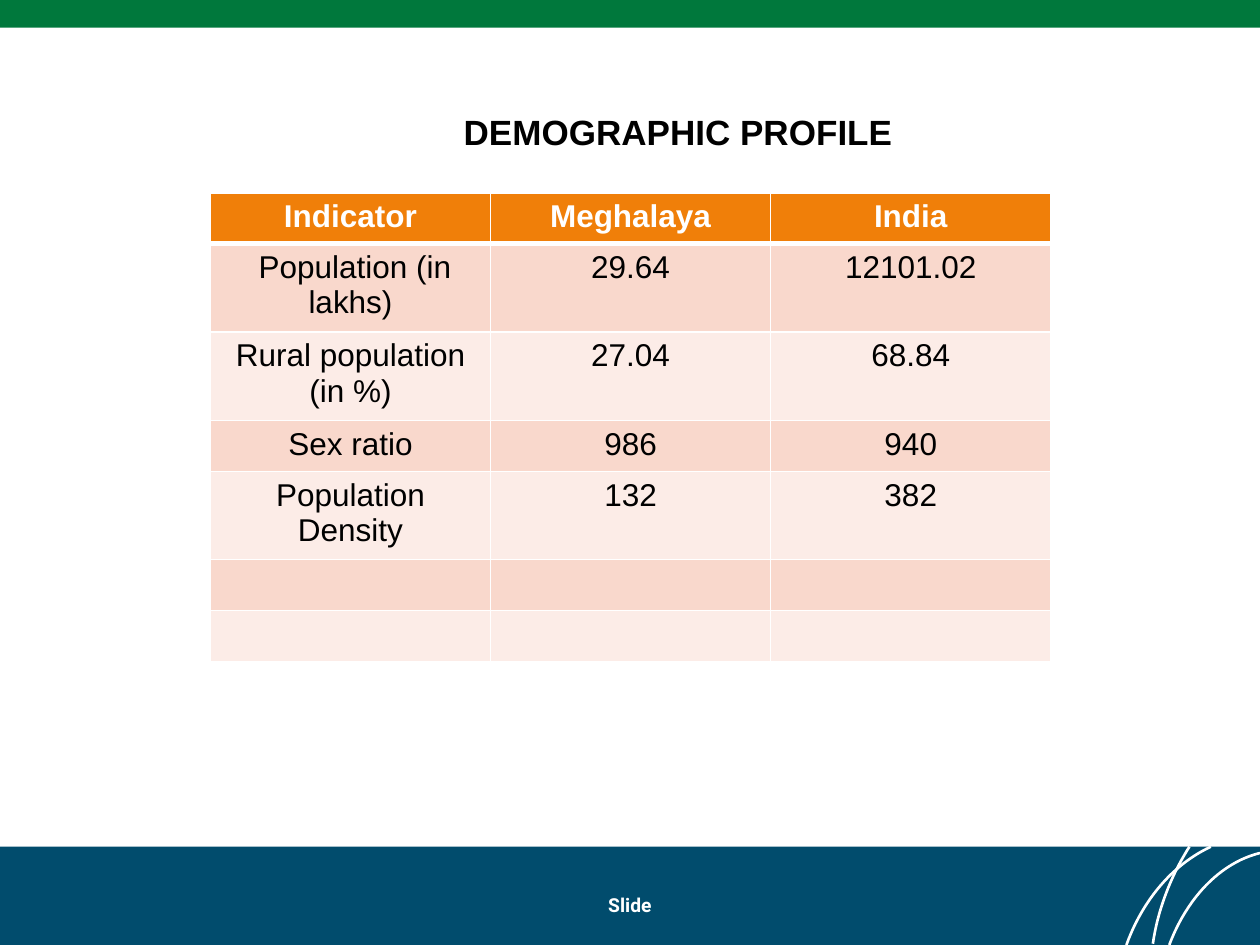
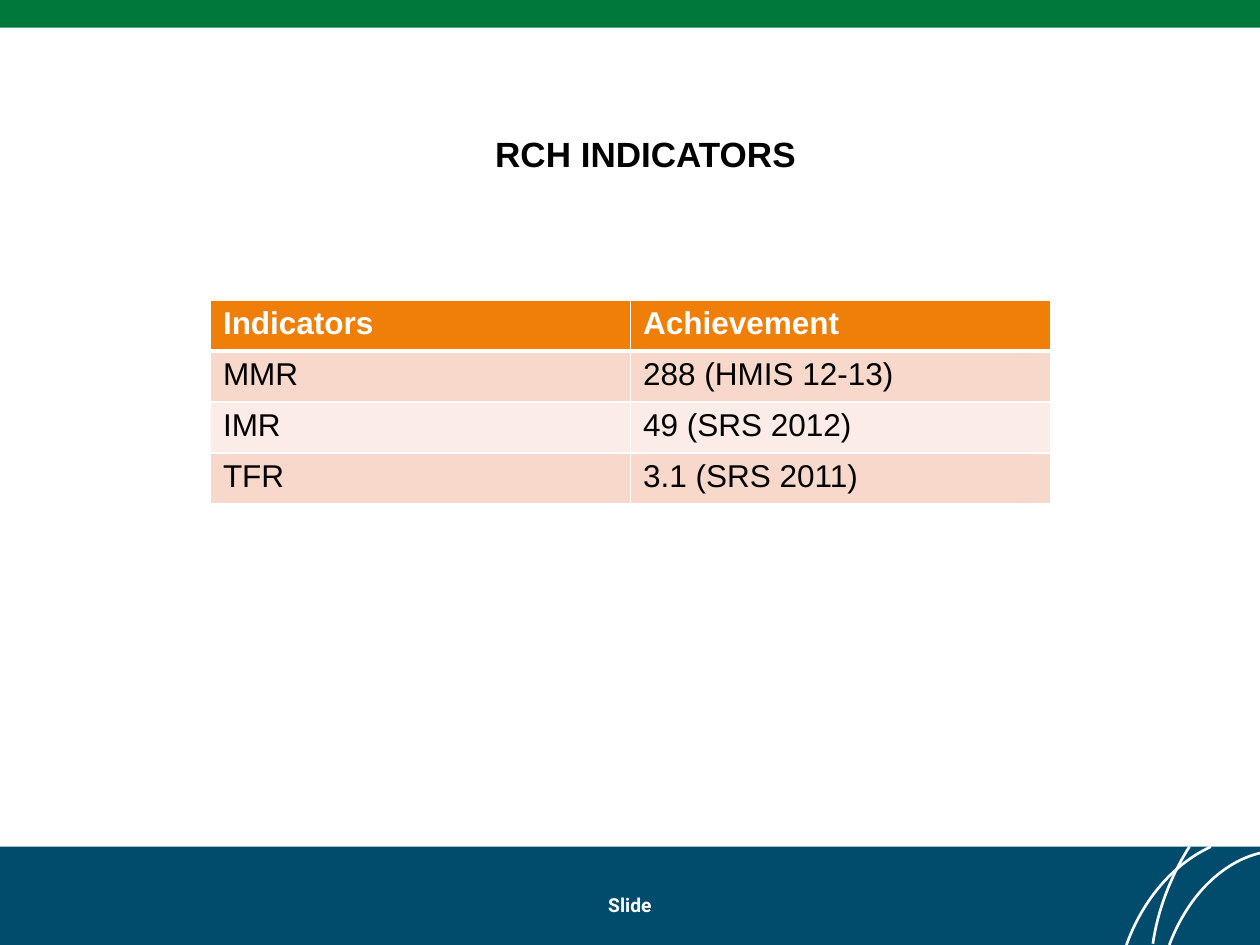
import dataclasses
import pptx
import pptx.dml.color
import pptx.enum.shapes
import pptx.enum.text
import pptx.oxml
import pptx.oxml.ns
import pptx.util

Inches = pptx.util.Inches
ALIGN = pptx.enum.text.PP_ALIGN
RECT = pptx.enum.shapes.MSO_SHAPE.RECTANGLE


@dataclasses.dataclass
class Theme:
    green: str = "00783C"
    navy: str = "014C6D"
    head: str = "F07F09"
    bands: tuple = ("F9D8CC", "FCECE7")
    white: str = "FFFFFF"
    black: str = "000000"
    font: str = "Arial"
    foot_font: str = "Roboto"
    title: int = 20
    cell: int = 18
    foot: int = 11


theme = Theme()


def color(code):
    return pptx.dml.color.RGBColor.from_string(code)


def write(frame, text, size, code, bold, align, font=theme.font):
    para = frame.paragraphs[0]
    para.alignment = align
    run = para.add_run()
    run.text = text
    run.font.name = font
    run.font.size = pptx.util.Pt(size)
    run.font.bold = bold
    run.font.color.rgb = color(code)


# Page furniture: bands (top, height, fill) and Bezier arcs, in inches
bands = [(6.72, 0.78, theme.navy), (0, 0.22, theme.green)]
arcs = [
    [(9.61, 6.72), (9.31, 6.86), (9.07, 7.14), (8.94, 7.5)],
    [(10, 6.77), (9.68, 6.85), (9.42, 7.13), (9.28, 7.5)],
    [(9.44, 6.72), (9.3, 6.94), (9.19, 7.21), (9.15, 7.49)],
]
steps = 24

# Table geometry: equal columns and rows
left, width = Inches(1.67), Inches(6.67)
pitch = Inches(1.62) // 4

# Content of each slide
pages = [
    {
        "title": "DEMOGRAPHIC PROFILE",
        "box": (3.58, 0.83, 4, 0.44),
        "top": 1.53,
        "align": ALIGN.CENTER,
        "rows": [
            ("Indicator", "Meghalaya", "India"),
            (" Population (in lakhs)", "29.64", "12101.02"),
            ("Rural population (in %)", "27.04", "68.84"),
            ("Sex ratio", "986", "940"),
            ("Population Density", "132", "382"),
            ("", "", ""),
            ("", "", ""),
        ],
    },
    {
        "title": "RCH INDICATORS",
        "box": (3.83, 1, 2.69, 0.44),
        "top": 2.38,
        "align": ALIGN.LEFT,
        "rows": [
            ("Indicators", "Achievement"),
            ("MMR", "288 (HMIS 12-13)"),
            ("IMR", "49 (SRS 2012)"),
            ("TFR", "3.1 (SRS 2011)"),
        ],
    },
]

deck = pptx.Presentation()
deck.slide_width, deck.slide_height = Inches(10), Inches(7.5)

for page in pages:
    slide = deck.slides.add_slide(deck.slide_layouts[5])
    shapes = slide.shapes

    # Bands
    for top, height, fill in bands:
        band = shapes.add_shape(RECT, 0, Inches(top), deck.slide_width, Inches(height))
        band.shadow.inherit = False
        band.fill.solid()
        band.fill.fore_color.rgb = color(fill)
        band.line.fill.background()

    # Corner arcs
    for arc in arcs:
        points = []
        for step in range(steps + 1):
            t = step / steps
            parts = ((1 - t) ** 3, 3 * t * (1 - t) ** 2, 3 * t * t * (1 - t), t ** 3)
            points.append(tuple(
                Inches(sum(part * knot[axis] for part, knot in zip(parts, arc)))
                for axis in (0, 1)
            ))
        pen = shapes.build_freeform(*points[0])
        pen.add_line_segments(points[1:], close=False)
        curve = pen.convert_to_shape()
        curve.shadow.inherit = False
        curve.fill.background()
        curve.line.color.rgb = color(theme.white)
        curve.line.width = pptx.util.Pt(1.5)

    # Footer
    foot = shapes.add_textbox(Inches(3.97), Inches(7.04), Inches(2.06), Inches(0.31))
    foot.text_frame.word_wrap = True
    write(foot.text_frame, "Slide", theme.foot, theme.white, True,
          ALIGN.CENTER, theme.foot_font)

    # Title
    title = shapes.title
    title.left, title.top, title.width, title.height = map(Inches, page["box"])
    frame = title.text_frame
    frame.word_wrap = True
    frame.auto_size = pptx.enum.text.MSO_AUTO_SIZE.NONE
    frame.vertical_anchor = pptx.enum.text.MSO_ANCHOR.TOP
    write(frame, page["title"], theme.title, theme.black, True, ALIGN.LEFT)

    # Table
    rows = page["rows"]
    table = shapes.add_table(len(rows), len(rows[0]), left, Inches(page["top"]),
                             width, pitch * len(rows)).table
    for r, row in enumerate(rows):
        is_head = r == 0
        fill = theme.head if is_head else theme.bands[(r - 1) % 2]
        ink = theme.white if is_head else theme.black
        # A thick rule parts the header from the body
        sides = {"L": 1, "R": 1, "T": 3 if r == 1 else 1, "B": 3 if is_head else 1}
        for c, text in enumerate(row):
            cell = table.cell(r, c)
            props = cell._tc.get_or_add_tcPr()
            for side, weight in sides.items():
                props.append(pptx.oxml.parse_xml(
                    f'<a:ln{side} {pptx.oxml.ns.nsdecls("a")} w="{pptx.util.Pt(weight)}">'
                    f'<a:solidFill><a:srgbClr val="{theme.white}"/></a:solidFill>'
                    f'</a:ln{side}>'))
            cell.fill.solid()
            cell.fill.fore_color.rgb = color(fill)
            if text:
                write(cell.text_frame, text, theme.cell, ink, is_head, page["align"])

deck.save("out.pptx")
